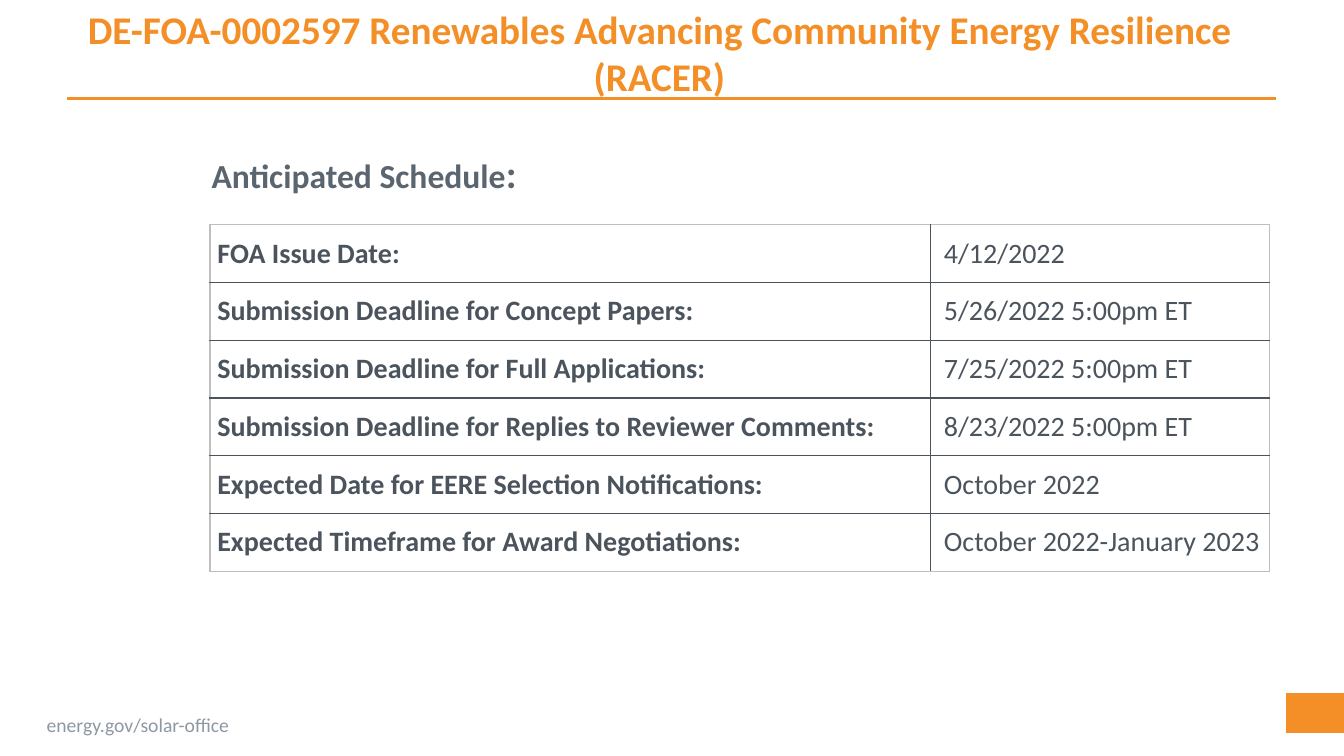
from pptx import Presentation
from pptx import util as u
from pptx.dml.color import RGBColor
from pptx.enum import shapes, text
from pptx.oxml.ns import qn
from lxml import etree

PX = 9525  # EMU per px, 96 px to the inch
ORANGE = RGBColor(0xF3, 0x8F, 0x26)
SLATE = RGBColor(0x4B, 0x54, 0x5D)
STEEL = RGBColor(0x5A, 0x65, 0x70)
MIST = RGBColor(0x8D, 0x98, 0xA3)
EDGE = RGBColor(0xBF, 0xBF, 0xBF)

DATES = [
    ("FOA Issue Date:", "4/12/2022"),
    ("Submission Deadline for Concept Papers:", "5/26/2022 5:00pm ET"),
    ("Submission Deadline for Full Applications:", "7/25/2022 5:00pm ET"),
    ("Submission Deadline for Replies to Reviewer Comments:", "8/23/2022 5:00pm ET"),
    ("Expected Date for EERE Selection Notifications:", "October 2022"),
    ("Expected Timeframe for Award Negotiations:", "October 2022-January 2023"),
]


def px(*nums):
    return [u.Emu(n * PX) for n in nums]


def style(font, size, color, bold=False):
    font.name, font.size, font.bold = "Calibri", u.Pt(size), bold
    font.color.rgb = color


def border(cell, sides):
    """Draw cell edges; sides maps L, R, T, B to a colour."""
    props = cell._tc.get_or_add_tcPr()
    for at, side in enumerate("LRTB"):
        line = etree.Element(qn(f"a:ln{side}"), w=str(u.Pt(1)))
        fill = etree.SubElement(line, qn("a:solidFill"))
        etree.SubElement(fill, qn("a:srgbClr"), val=str(sides[side]))
        props.insert(at, line)


def add_head(slide, x, y, w, h):
    # Title in its placeholder
    title = slide.shapes.title
    title.left, title.top, title.width, title.height = px(x, y, w, h)
    frame = title.text_frame
    frame.text = "DE-FOA-0002597 Renewables Advancing Community Energy Resilience (RACER)"
    frame.word_wrap = True
    frame.auto_size = text.MSO_AUTO_SIZE.NONE
    frame.vertical_anchor = text.MSO_ANCHOR.TOP
    para = frame.paragraphs[0]
    para.alignment = text.PP_ALIGN.CENTER
    style(para.font, 28, ORANGE, True)

    # Rule under the title
    rule = slide.shapes.add_connector(
        shapes.MSO_CONNECTOR.STRAIGHT, *px(x + 40, y + 94, x + 1191, y + 94))
    rule.line.color.rgb = ORANGE
    rule.line.width = u.Pt(2)
    etree.SubElement(rule._element.spPr, qn("a:effectLst"))


def add_label(slide, x, y, w, h):
    box = slide.shapes.add_textbox(*px(x, y, w, h))
    box.text_frame.word_wrap = True
    para = box.text_frame.paragraphs[0]
    for words, size in (("Anticipated Schedule", 24), (":", 28)):
        run = para.add_run()
        run.text = words
        style(run.font, size, STEEL, True)


def add_dates(slide, x, y, w, h):
    rows = len(DATES)
    table = slide.shapes.add_table(rows, 2, *px(x, y, w, h)).table
    table.first_row = table.horz_banding = False
    split = w * 68 // 100
    table.columns[0].width, table.columns[1].width = px(split, w - split)
    for r, pair in enumerate(DATES):
        table.rows[r].height = u.Emu(h * PX // rows)
        for c, words in enumerate(pair):
            cell = table.cell(r, c)
            cell.text = words
            cell.fill.background()
            cell.vertical_anchor = text.MSO_ANCHOR.MIDDLE
            cell.margin_left, cell.margin_right = px(13 if c else 7, 6)
            cell.margin_top = cell.margin_bottom = 0
            style(cell.text_frame.paragraphs[0].font, 20, SLATE, c == 0)
            outer = {"L": c == 0, "R": c == 1, "T": r == 0, "B": r == rows - 1}
            border(cell, {k: EDGE if out else SLATE for k, out in outer.items()})


def add_foot(slide, x, y, w, h):
    # Corner block
    block = slide.shapes.add_shape(
        shapes.MSO_SHAPE.RECTANGLE, *px(x + w - 55, y, 55, 38))
    block.shadow.inherit = False
    block.fill.solid()
    block.fill.fore_color.rgb = ORANGE
    block.line.fill.background()

    # Site address
    box = slide.shapes.add_textbox(*px(x + 35, y + 14, 196, h - 14))
    frame = box.text_frame
    frame.word_wrap = False
    frame.text = "energy.gov/solar-office"
    style(frame.paragraphs[0].font, 14, MIST)


def main():
    deck = Presentation()
    deck.slide_width, deck.slide_height = px(1280, 720)
    slide = deck.slides.add_slide(deck.slide_layouts[5])
    add_head(slide, 24, 0, 1208, 72)
    add_label(slide, 192, 137, 848, 55)
    add_dates(slide, 200, 214, 1009, 330)
    add_foot(slide, 0, 660, 1280, 47)
    deck.save("out.pptx")


if __name__ == "__main__":
    main()
